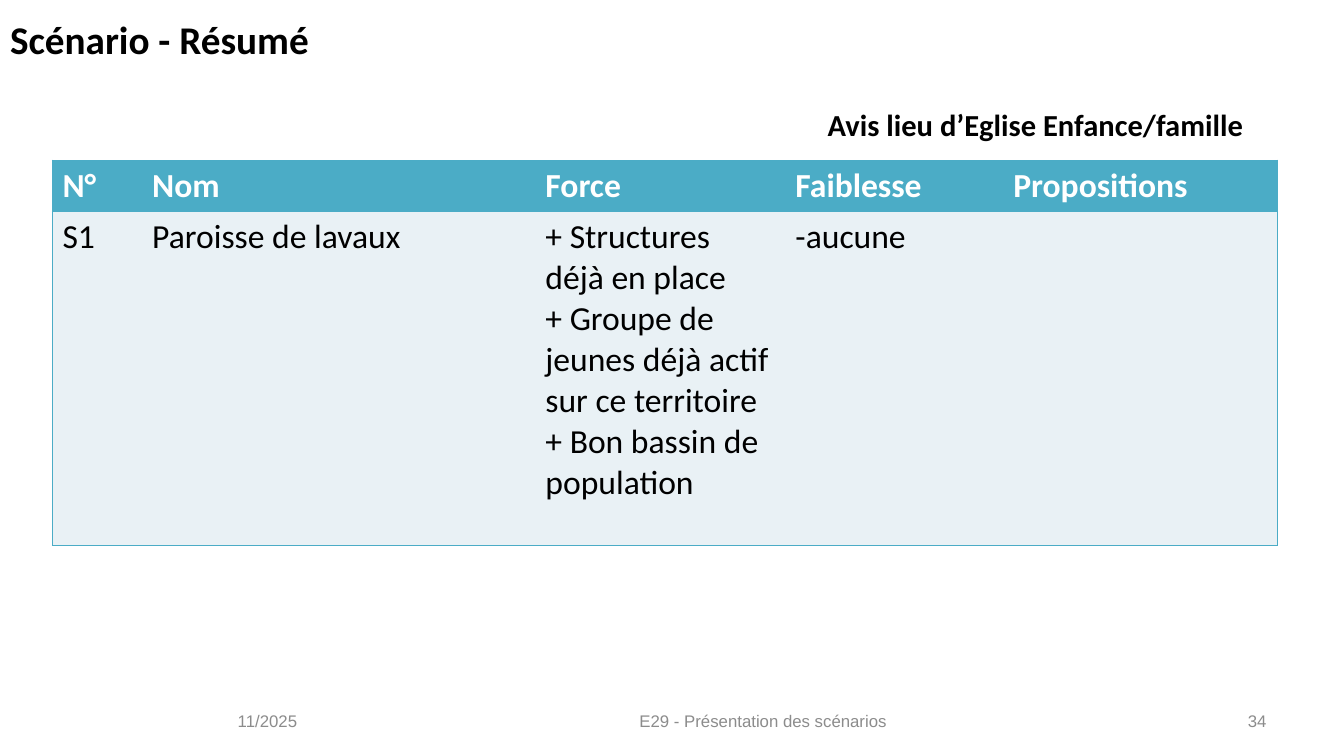
from dataclasses import dataclass

from lxml.etree import SubElement
from pptx import Presentation
from pptx.dml.color import RGBColor
from pptx.enum.text import MSO_ANCHOR, PP_ALIGN
from pptx.oxml.ns import qn
from pptx.util import Inches, Pt

COLORS = {
    "black": "000000",
    "white": "FFFFFF",
    "teal": "4BACC6",
    "pale": "E9F1F5",
    "gray": "8C8C8C",
}
NO_GRID = "{2D5ABB26-0587-4C30-8999-92F81FD0307C}"
LINE = Pt(0.96)


@dataclass
class Label:
    text: str
    left: float
    top: float
    width: float
    height: float
    size: float
    font: str = "Calibri"
    color: str = "black"
    bold: bool = True
    align: PP_ALIGN = PP_ALIGN.LEFT
    anchor: MSO_ANCHOR = MSO_ANCHOR.TOP


def footer(text: str, left: float, width: float, align: PP_ALIGN) -> Label:
    return Label(text, left, 6.95, width, 0.4, 12, "Arial", "gray", False,
                 align, MSO_ANCHOR.MIDDLE)


TITLE = Label("Scénario - Résumé", 0, 0.1, 4.47, 0.6, 28)
LABELS = [
    Label("Avis lieu d’Eglise Enfance/famille", 8.11, 1, 4.55, 0.6, 21.8),
    footer("11/2025", 2.26, 1.2, PP_ALIGN.LEFT),
    footer("E29 - Présentation des scénarios", 3.68, 7.78, PP_ALIGN.CENTER),
    footer("34", 11.82, 0.84, PP_ALIGN.RIGHT),
]

WIDTHS = [0.89, 3.9, 2.48, 2.16, 2.72]
HEIGHTS = [0.51, 3.31]
ROWS = [
    ["N°", "Nom", "Force", "Faiblesse", "Propositions"],
    ["S1", "Paroisse de lavaux",
     "+ Structures déjà en place\n"
     "+ Groupe de jeunes déjà actif sur ce territoire\n"
     "+ Bon bassin de population",
     "-aucune", ""],
]


def rgb(name: str) -> RGBColor:
    return RGBColor.from_string(COLORS[name])


def style(frame, size: float, font: str, color: str, bold: bool,
          align: PP_ALIGN = PP_ALIGN.LEFT) -> None:
    for para in frame.paragraphs:
        para.alignment = align
        para.font.size = Pt(size)
        para.font.name = font
        para.font.bold = bold
        para.font.color.rgb = rgb(color)


def place(shape, label: Label) -> None:
    shape.left, shape.top = Inches(label.left), Inches(label.top)
    shape.width, shape.height = Inches(label.width), Inches(label.height)
    frame = shape.text_frame
    frame.text = label.text
    frame.word_wrap = True
    frame.vertical_anchor = label.anchor
    style(frame, label.size, label.font, label.color, label.bold, label.align)


def border(cell, sides: str) -> None:
    props = cell._tc.get_or_add_tcPr()
    for spot, side in enumerate(sides):
        line = SubElement(props, qn(f"a:ln{side}"), w=str(int(LINE)))
        fill = SubElement(line, qn("a:solidFill"))
        SubElement(fill, qn("a:srgbClr"), val=COLORS["teal"])
        props.insert(spot, line)


def grid(slide) -> None:
    frame = slide.shapes.add_table(
        len(ROWS), len(WIDTHS), Inches(0.52), Inches(1.59),
        Inches(sum(WIDTHS)), Inches(sum(HEIGHTS)))
    table = frame.table
    table._tbl.tblPr.find(qn("a:tableStyleId")).text = NO_GRID
    for col, width in zip(table.columns, WIDTHS):
        col.width = Inches(width)
    for r, row in enumerate(ROWS):
        table.rows[r].height = Inches(HEIGHTS[r])
        head = r == 0
        for c, text in enumerate(row):
            cell = table.cell(r, c)
            cell.text = text
            cell.fill.solid()
            cell.fill.fore_color.rgb = rgb("teal" if head else "pale")
            style(cell.text_frame, 24, "Calibri",
                  "white" if head else "black", head)
            # Only the outer edges and the row edges carry lines
            left = "L" if c == 0 else ""
            right = "R" if c == len(row) - 1 else ""
            border(cell, left + right + "TB")


def main() -> None:
    deck = Presentation()
    deck.slide_width, deck.slide_height = Inches(13.33), Inches(7.5)
    slide = deck.slides.add_slide(deck.slide_layouts[5])

    # Title
    place(slide.shapes.title, TITLE)

    # Summary table
    grid(slide)

    # Subtitle and footer
    for label in LABELS:
        place(slide.shapes.add_textbox(0, 0, 0, 0), label)

    deck.save("out.pptx")


if __name__ == "__main__":
    main()
